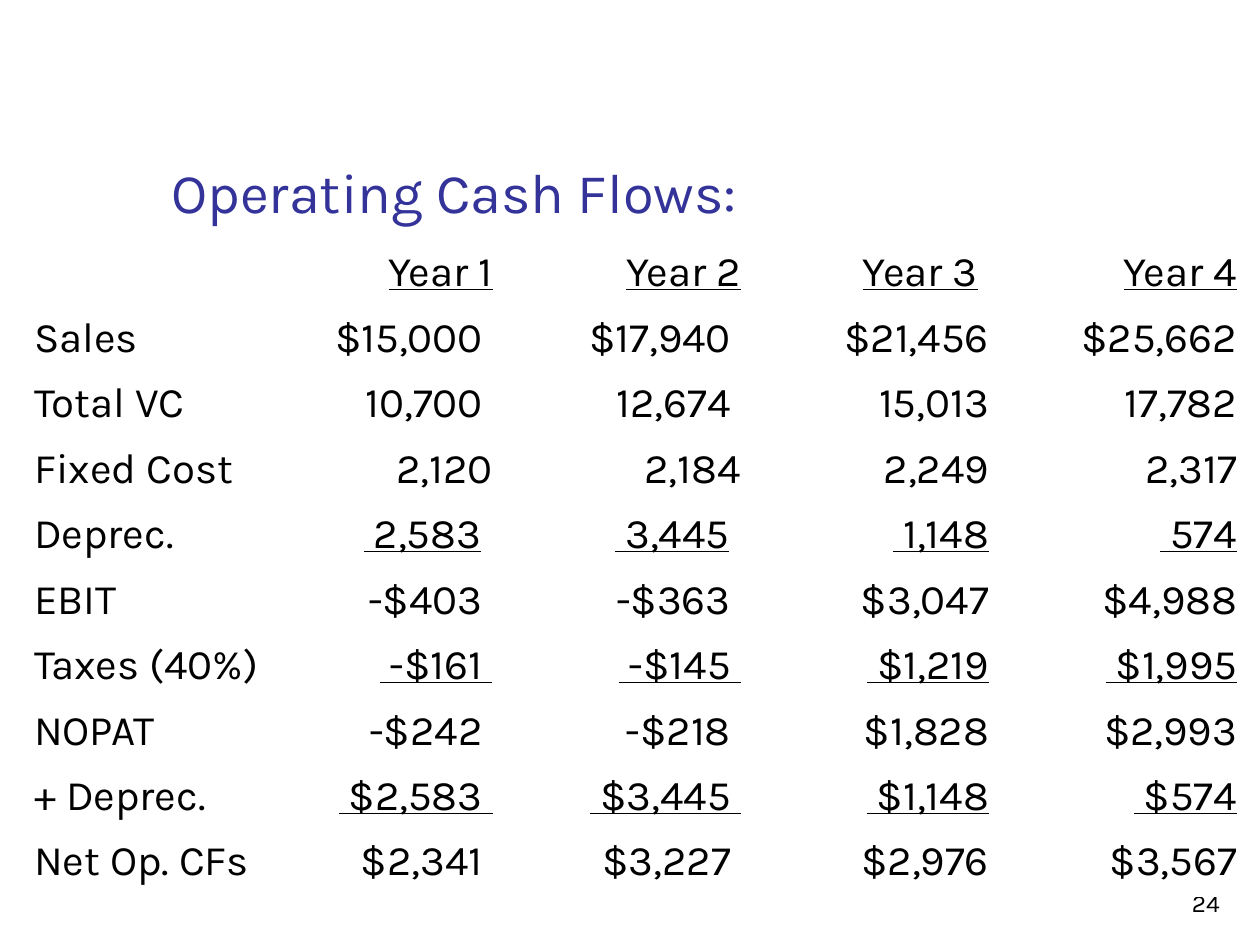
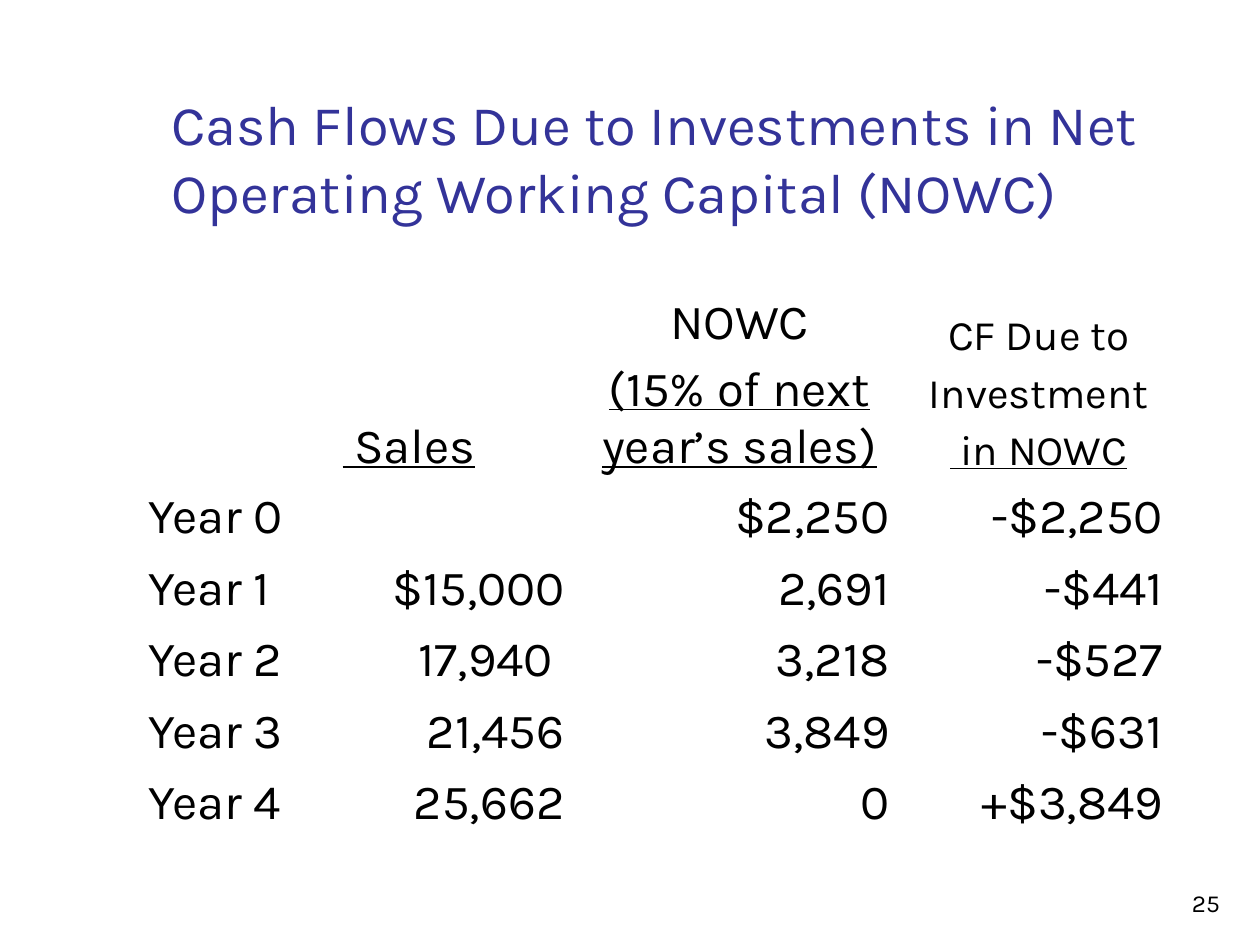
"""Build two capital budgeting slides: operating cash flows and NOWC cash flows."""
from pptx import Presentation
from pptx.dml.color import RGBColor
from pptx.enum.text import MSO_ANCHOR as ANCHOR, MSO_AUTO_SIZE as AUTO, PP_ALIGN as ALIGN
from pptx.util import Inches, Pt

FONT, BLUE, BLACK = "Karla", "333399", "000000"


def style(p, size, color=BLACK, align=ALIGN.LEFT):
    p.alignment = align
    for r in p.runs:
        r.font.name = FONT
        r.font.size = Pt(size)
        r.font.color.rgb = RGBColor.from_string(color)


def add_grid(s, left, top, widths, heights, rows, size):
    frame = s.shapes.add_table(len(rows), len(widths), Inches(left), Inches(top),
                               Inches(sum(widths)), Inches(sum(heights)))
    table = frame.table
    table.first_row = table.horz_banding = False
    for col, width in zip(table.columns, widths):
        col.width = Inches(width)
    for row, height, texts in zip(table.rows, heights, rows):
        row.height = Inches(height)
        for c, (cell, text) in enumerate(zip(row.cells, texts)):
            cell.fill.background()
            cell.text_frame.text = text
            for p in cell.text_frame.paragraphs:
                style(p, size, align=ALIGN.RIGHT if c else ALIGN.LEFT)
    return table


prs = Presentation()
prs.slide_width, prs.slide_height = Inches(10), Inches(7.5)

titles = ["Operating Cash Flows:",
          "Cash Flows Due to Investments in Net Operating Working Capital (NOWC)"]
for number, title in enumerate(titles, 24):
    s = prs.slides.add_slide(prs.slide_layouts[5])
    sp = s.shapes.title
    sp.left, sp.top, sp.width, sp.height = [Inches(v) for v in (1.26, 0.23, 8.52, 1.6)]
    tf = sp.text_frame
    tf.text = title
    tf.auto_size = AUTO.NONE
    tf.vertical_anchor = ANCHOR.BOTTOM
    style(tf.paragraphs[0], 32, BLUE)

    sp = s.shapes.add_textbox(Inches(7.7), Inches(6.83), Inches(2.08), Inches(0.5))
    tf = sp.text_frame
    tf.word_wrap = True
    tf.vertical_anchor = ANCHOR.BOTTOM
    tf.text = str(number)
    style(tf.paragraphs[0], 14, align=ALIGN.RIGHT)

cash_flows = [
    ["", "Year 1", "Year 2", "Year 3", "Year 4"],
    ["Sales", "$15,000 ", "$17,940 ", "$21,456", "$25,662"],
    ["Total VC", "10,700 ", "12,674 ", "15,013", "17,782"],
    ["Fixed Cost", "2,120", "2,184", "2,249", "2,317"],
    ["Deprec.", " 2,583", " 3,445", " 1,148", " 574"],
    ["EBIT", "-$403 ", "-$363 ", "$3,047", "$4,988"],
    ["Taxes (40%)", " -$161 ", " -$145 ", " $1,219", " $1,995"],
    ["NOPAT", "-$242 ", "-$218 ", "$1,828", "$2,993"],
    ["+ Deprec.", " $2,583 ", " $3,445 ", " $1,148", " $574"],
    ["Net Op. CFs", "$2,341 ", "$3,227 ", "$2,976", "$3,567"],
]
table = add_grid(prs.slides[0], 0.17, 1.92, [2.22, 1.62] + [1.97] * 3,
                 [0.52] * len(cash_flows), cash_flows, 24)
for row in (0, 4, 6, 8):
    for col in range(1, 5):
        table.cell(row, col).text_frame.paragraphs[0].runs[0].font.underline = True
for row, col in ((0, 3), (4, 1), (4, 2)):
    table.cell(row, col).margin_right = Inches(0.19)

nowc_flows = [
    ["", " Sales", "NOWC\n(15% of next year’s sales)", "CF Due to\nInvestment\n in NOWC"],
    ["Year 0", "", "$2,250", "-$2,250"],
    ["Year 1", "$15,000", "2,691", "-$441"],
    ["Year 2", "17,940 ", "3,218", "-$527"],
    ["Year 3", "21,456", "3,849", "-$631"],
    ["Year 4", "25,662", "0", "+$3,849"],
]
table = add_grid(prs.slides[1], 1.08, 2.25, [1.42, 2.08, 2.58, 2.17],
                 [1.55] + [0.55] * 5, nowc_flows, 28)
headings = [(1, 28, ALIGN.LEFT), (2, 28, ALIGN.CENTER), (3, 24, ALIGN.CENTER)]
for col, size, align in headings:
    cell = table.cell(0, col)
    cell.vertical_anchor = ANCHOR.BOTTOM
    paragraphs = cell.text_frame.paragraphs
    for p in paragraphs:
        style(p, size, align=align)
    for p in paragraphs[1:]:
        p.space_before = Pt(size * 0.2)
    paragraphs[-1].runs[0].font.underline = True
table.cell(0, 1).margin_left = Inches(0.22)

prs.save("out.pptx")
